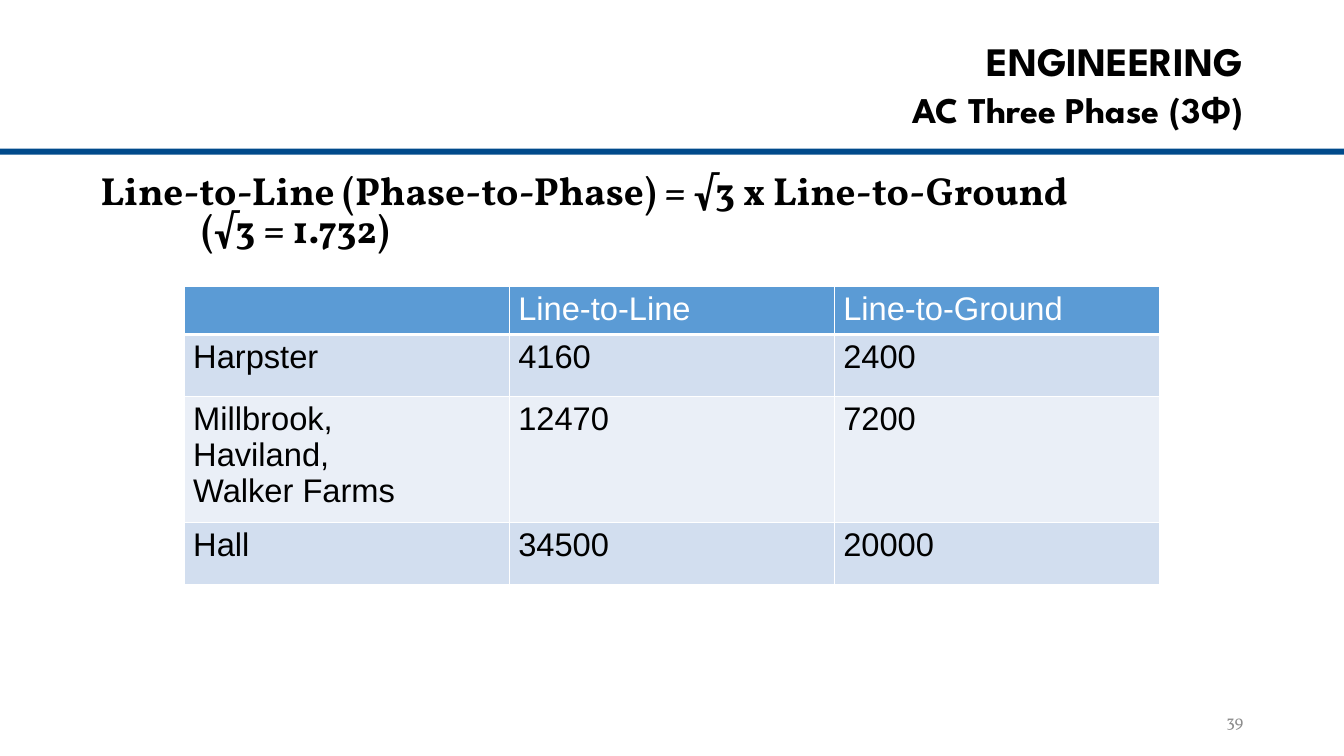
from pptx import Presentation
from pptx.dml.color import RGBColor
from pptx.enum.shapes import MSO_SHAPE
from pptx.enum.text import MSO_ANCHOR, PP_ALIGN
from pptx.oxml import parse_xml
from pptx.oxml.ns import nsdecls
from pptx.util import Inches, Pt

LEFT, RIGHT = PP_ALIGN.LEFT, PP_ALIGN.RIGHT
TOP, MIDDLE = MSO_ANCHOR.TOP, MSO_ANCHOR.MIDDLE
RECTANGLE = MSO_SHAPE.RECTANGLE

BLACK = RGBColor(0x00, 0x00, 0x00)
WHITE = RGBColor(0xFF, 0xFF, 0xFF)
GRAY = RGBColor(0x8C, 0x8C, 0x8C)
NAVY = RGBColor(0x00, 0x4A, 0x8B)
HEADER_BLUE = RGBColor(0x5B, 0x9B, 0xD5)
BAND_DARK = RGBColor(0xD2, 0xDE, 0xEF)
BAND_LIGHT = RGBColor(0xEA, 0xEF, 0xF7)


def add_span(para, text, font, size, color, bold=False):
    span = para.add_run()
    span.text = text
    span.font.name = font
    span.font.size = Pt(size)
    span.font.color.rgb = color
    span.font.bold = bold


def add_box(left, top, width, height, anchor):
    box = page.shapes.add_textbox(Inches(left), Inches(top), Inches(width), Inches(height))
    frame = box.text_frame
    frame.word_wrap = True
    frame.vertical_anchor = anchor
    return frame


deck = Presentation()
deck.slide_width = Inches(16)
deck.slide_height = Inches(9)
page = deck.slides.add_slide(deck.slide_layouts[6])

rule = page.shapes.add_shape(RECTANGLE, Inches(0), Inches(1.77), Inches(16), Inches(0.07))
rule.shadow.inherit = False
rule.fill.solid()
rule.fill.fore_color.rgb = NAVY
rule.line.fill.background()

formula = add_box(1.1, 1.96, 13.8, 1.2, TOP)
formula.margin_top = Inches(0.13)
formula_lines = [
    ("Line-to-Line (Phase-to-Phase) = √3 x Line-to-Ground", 0),
    ("(√3 = 1.732)", 1.2),
]
for index, (text, indent) in enumerate(formula_lines):
    para = formula.add_paragraph() if index else formula.paragraphs[0]
    para.line_spacing = 0.8
    para._p.get_or_add_pPr().set("marL", str(Inches(indent)))
    add_span(para, text, "Vollkorn", 33.6, BLACK, True)

labels = [
    ("39", (11.3, 8.34, 3.6, 0.48), MIDDLE, 1, "Vollkorn", 14.4, GRAY, False),
    ("ENGINEERING", (2.26, 0.48, 12.64, 0.58), MIDDLE, 0.8, "League Spartan", 34.6, BLACK, True),
    ("AC Three Phase (3Φ)", (2.26, 1.06, 12.64, 0.55), MIDDLE, 0.9, "League Spartan", 31, BLACK, True),
]
for text, place, anchor, spacing, font, size, color, bold in labels:
    para = add_box(*place, anchor).paragraphs[0]
    para.alignment = RIGHT
    para.line_spacing = spacing
    add_span(para, text, font, size, color, bold)

voltages = [
    ("", "Line-to-Line", "Line-to-Ground"),
    ("Harpster", "4160", "2400"),
    ("Millbrook,\nHaviland,\nWalker Farms", "12470", "7200"),
    ("Hall", "34500", "20000"),
]
row_heights = [0.57, 0.74, 1.47, 0.74]
row_fills = [HEADER_BLUE, BAND_DARK, BAND_LIGHT, BAND_DARK]

table = page.shapes.add_table(
    4, 3, Inches(2.2), Inches(3.41), Inches(11.61), Inches(sum(row_heights))
).table
for column in table.columns:
    column.width = Inches(3.87)
for row_index, values in enumerate(voltages):
    table.rows[row_index].height = Inches(row_heights[row_index])
    for column_index, value in enumerate(values):
        cell = table.cell(row_index, column_index)
        for position, side in enumerate(("lnL", "lnR", "lnT", "lnB")):
            width = Pt(3) if row_index == 0 and side == "lnB" else Pt(1)
            border = parse_xml(
                f'<a:{side} {nsdecls("a")} w="{width}"><a:solidFill>'
                f'<a:srgbClr val="{WHITE}"/></a:solidFill></a:{side}>'
            )
            cell._tc.get_or_add_tcPr().insert(position, border)
        cell.fill.solid()
        cell.fill.fore_color.rgb = row_fills[row_index]
        for line_index, line in enumerate(value.split("\n")):
            frame = cell.text_frame
            para = frame.add_paragraph() if line_index else frame.paragraphs[0]
            para.alignment = LEFT
            if line:
                add_span(para, line, "Arial", 28, BLACK if row_index else WHITE)
            else:
                para.font.size = Pt(28)

deck.save("out.pptx")
